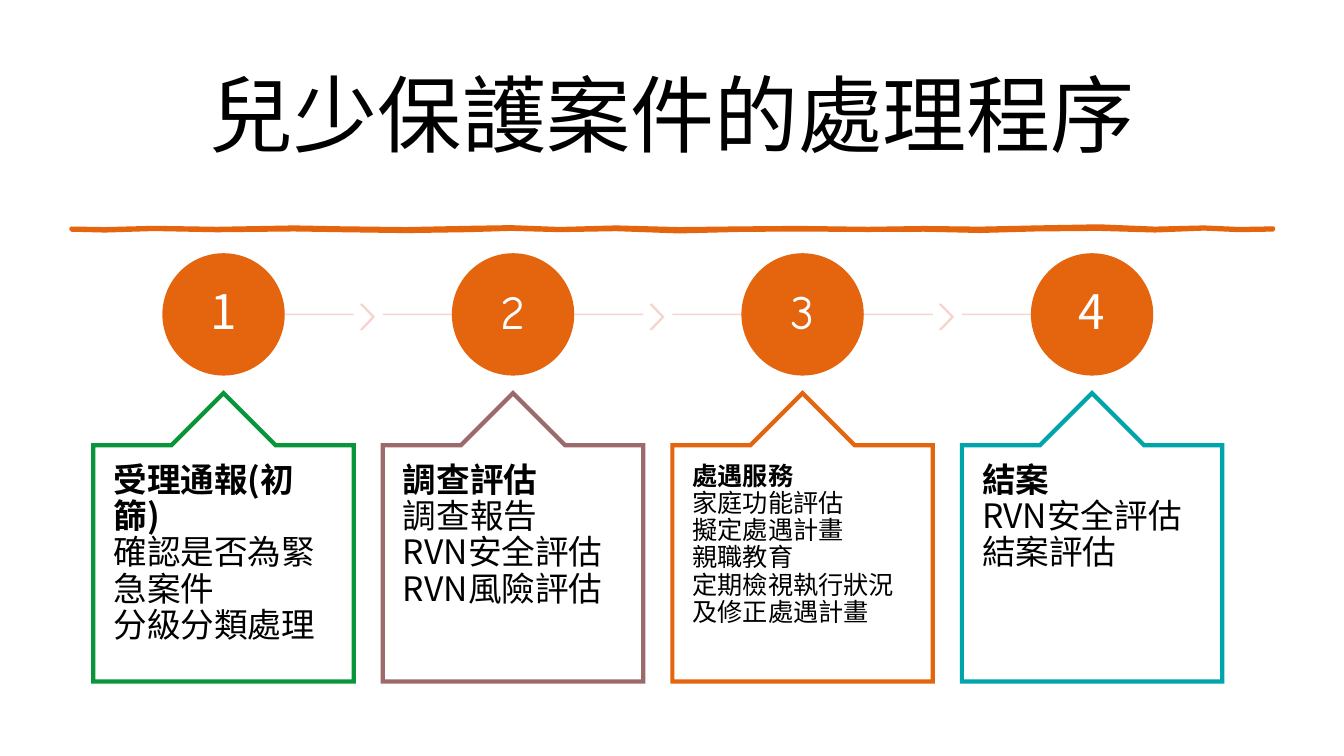
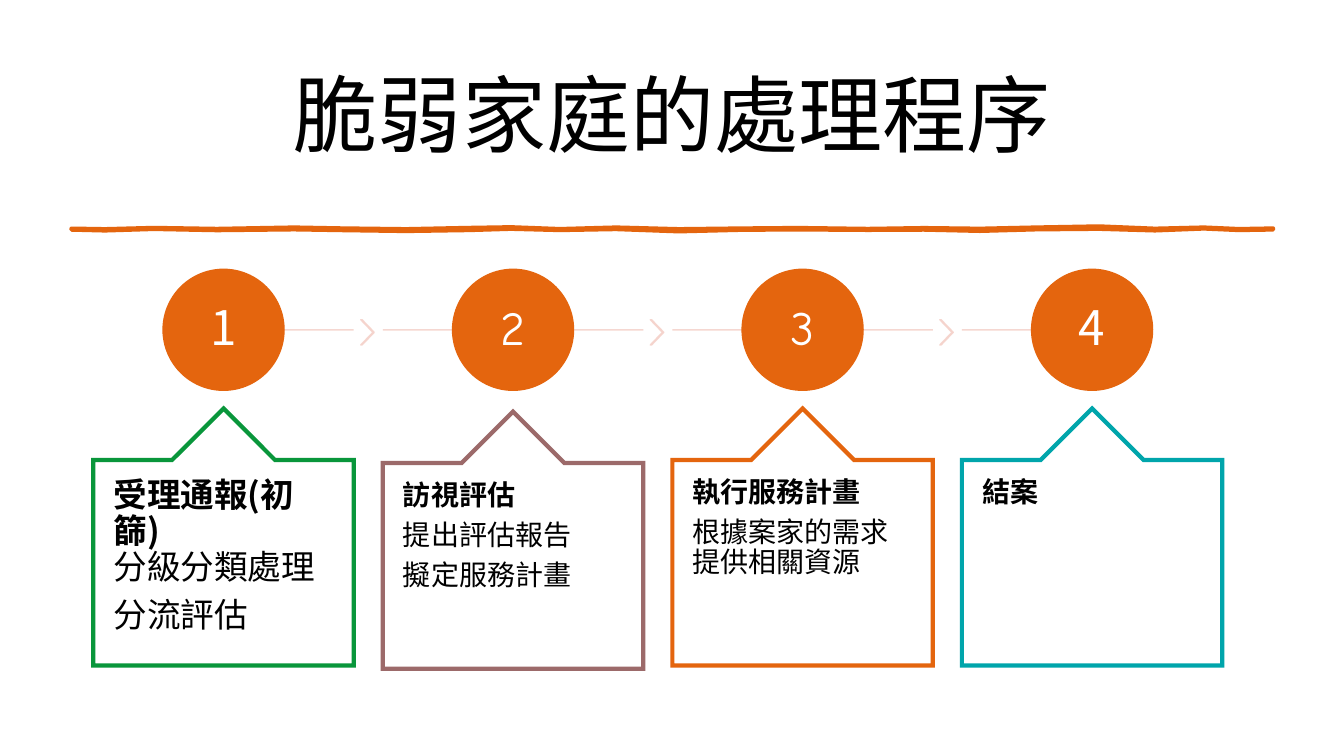
from lxml.etree import SubElement
from pptx import Presentation
from pptx.dml.color import RGBColor
from pptx.enum.shapes import MSO_CONNECTOR, MSO_SHAPE
from pptx.enum.text import MSO_ANCHOR, MSO_AUTO_SIZE, PP_ALIGN
from pptx.oxml.ns import qn
from pptx.util import Pt

COLORS = {
    "orange": "E4650E", "pink": "F5D3CC", "green": "09963B", "mauve": "9C6A6A",
    "teal": "00A5AB", "white": "FFFFFF", "black": "000000",
}
CJK, COMIC = "Noto Sans CJK TC", "Comic Neue"

# Column grid and vertical offsets from the top of the circles, in points
LEFT, PITCH, WIDTH = 66.7, 206.8, 186
CIRCLE = 86.4
CALLOUT_DROP = 99.4
STEPS = [("1", CJK, "green"), ("2", COMIC, "mauve"),
         ("3", COMIC, "orange"), ("4", CJK, "teal")]

# Hand-drawn rule: x, middle and thickness of each knot
BRUSH = [(51, 163.7, 1), (75, 164.2, 1.2), (110, 163.2, 1), (155, 164, 1.2),
         (210, 163.2, 1.6), (245, 163.8, 1.5), (290, 164.4, 1.6), (335, 163.6, 1.8),
         (365, 162.9, 1.4), (400, 164, 1), (440, 163.1, 1.4), (485, 164.5, 1.8),
         (530, 163.7, 1.2), (570, 163.4, 1.3), (620, 163.9, 1), (660, 163.5, 1.4),
         (700, 164.2, 1.8), (740, 163.2, 1.6), (785, 162.6, 2), (825, 164, 1.5),
         (860, 162.9, 1), (885, 164, 1), (909.5, 163.6, 1)]


class Deck:
    """Holds the shared style and the page being drawn."""

    def __init__(self):
        self.deck = Presentation()
        self.deck.slide_width, self.deck.slide_height = Pt(960), Pt(540)
        self.layout = self.deck.slide_layouts[5]
        self.page = None

    def add_page(self, title):
        first = self.page is None
        self.page = self.deck.slides.add_slide(self.layout)
        if first:
            self.brush_rule()
        box = self.page.shapes.title
        box.left, box.top, box.width, box.height = Pt(66), Pt(28.8), Pt(828), Pt(104.4)
        frame = box.text_frame
        frame.text = title
        frame.auto_size = MSO_AUTO_SIZE.NONE
        frame.vertical_anchor = MSO_ANCHOR.MIDDLE
        frame.paragraphs[0].alignment = PP_ALIGN.CENTER
        self.style(frame.paragraphs[0].runs[0], 60)

    def brush_rule(self):
        """Draw the rule once and move it to the layout that all pages share."""
        top = [(Pt(x), Pt(y - thick / 2)) for x, y, thick in BRUSH]
        bottom = [(Pt(x), Pt(y + thick / 2)) for x, y, thick in reversed(BRUSH)]
        builder = self.page.shapes.build_freeform(*top[0])
        builder.add_line_segments(top[1:] + bottom, close=True)
        rule = builder.convert_to_shape()
        self.paint(rule, "orange", "orange", 2.75)
        self.layout.shapes.element.append(rule.element)

    def style(self, span, size, color="black", name=CJK, bold=False):
        font = span.font
        font.size, font.bold, font.name = Pt(size), bold, name
        font.color.rgb = RGBColor.from_string(COLORS[color])
        SubElement(font._element, qn("a:ea")).set("typeface", name)

    def paint(self, shape, fill, line, weight):
        shape.shadow.inherit = False
        shape.fill.solid()
        shape.fill.fore_color.rgb = RGBColor.from_string(COLORS[fill])
        self.outline(shape, line, weight)

    def outline(self, shape, color, weight):
        shape.line.width = Pt(weight)
        shape.line.color.rgb = RGBColor.from_string(COLORS[color])

    def fade(self, shape):
        """Make the fill and line of a shape 90 % opaque."""
        for color in shape.element.spPr.iter(qn("a:srgbClr")):
            SubElement(color, qn("a:alpha")).set("val", "90000")

    def shape(self, kind, left, top, width, height, adjustments=()):
        shape = self.page.shapes.add_shape(kind, Pt(left), Pt(top), Pt(width), Pt(height))
        for index, value in enumerate(adjustments):
            shape.adjustments[index] = value
        return shape

    def margins(self, frame, across, down):
        frame.word_wrap = True
        frame.margin_left = frame.margin_right = Pt(across)
        frame.margin_top = frame.margin_bottom = Pt(down)

    def line(self, start, end, y):
        line = self.page.shapes.add_connector(
            MSO_CONNECTOR.STRAIGHT, Pt(start), Pt(y), Pt(end), Pt(y))
        self.outline(line, "pink", 1)
        self.fade(line)
        SubElement(line.element.spPr, qn("a:effectLst"))

    def chevron(self, left, top):
        chevron = self.shape(MSO_SHAPE.CHEVRON, left, top, 9.6, 18, [0.9])
        self.paint(chevron, "pink", "pink", 1)
        self.fade(chevron)

    def circle(self, left, top, number, name):
        circle = self.shape(MSO_SHAPE.OVAL, left, top, CIRCLE, CIRCLE)
        self.paint(circle, "orange", "orange", 1)
        frame = circle.text_frame
        frame.text = number
        self.margins(frame, 3.6, 3.6)
        frame.vertical_anchor = MSO_ANCHOR.MIDDLE
        para = frame.paragraphs[0]
        para.alignment, para.line_spacing = PP_ALIGN.CENTER, 0.9
        self.style(para.runs[0], 34, "white", name)

    def callout(self, left, top, height, color, size, text):
        """Box with an upward point; the first line of its text is bold."""
        box = self.shape(MSO_SHAPE.UP_ARROW_CALLOUT, left, top, WIDTH, height,
                         [0.5, 0.2, 0.2, 1])
        self.paint(box, "white", color, 3)
        SubElement(box.element.spPr.find(qn("a:ln")), qn("a:miter")).set("lim", "800000")
        frame = box.text_frame
        frame.text = text
        self.margins(frame, 14.4, 13)
        frame.vertical_anchor = MSO_ANCHOR.TOP
        for row, para in enumerate(frame.paragraphs):
            para.alignment, para.line_spacing = PP_ALIGN.LEFT, 0.9
            para.space_after = Pt(0.35 * size)
            for column, span in enumerate(para.runs):
                self.style(span, size, bold=row == column == 0)

    def process(self, top, height, contents):
        """Four numbered steps, each with a callout below it."""
        last = len(STEPS) - 1
        for index, ((number, name, color), content) in enumerate(zip(STEPS, contents)):
            size, text, shift = content
            left = LEFT + index * PITCH
            middle, right = left + WIDTH / 2, left + WIDTH
            self.line(left if index else middle, right if index < last else middle,
                      top + CIRCLE / 2)
            if index < last:
                self.chevron(right + 5, top + 36)
            self.circle(middle - CIRCLE / 2, top, number, name)
            self.callout(left, top + CALLOUT_DROP + shift, height, color, size, text)


def main():
    deck = Deck()

    # Each step: text size, text (\v breaks a line, \n a paragraph), downward shift
    deck.add_page("兒少保護案件的處理程序")
    deck.process(181.4, 206, [
        (24, "受理通報(初篩)\v確認是否為緊急案件\v分級分類處理", 0),
        (24, "調查評估\v調查報告\vRVN安全評估\vRVN風險評估", 0),
        (18, "處遇服務\v家庭功能評估\v擬定處遇計畫\v親職教育\v定期檢視執行狀況及修正處遇計畫", 0),
        (24, "結案\vRVN安全評估\v結案評估", 0),
    ])

    deck.add_page("脆弱家庭的處理程序")
    deck.process(192.4, 183.6, [
        (24, "受理通報(初篩)\v分級分類處理\n分流評估", 0),
        (20, "訪視評估\n提出評估報告\n擬定服務計畫", 2.2),
        (20, "執行服務計畫\n根據案家的需求提供相關資源", 0),
        (20, "結案", 0),
    ])

    deck.deck.save("out.pptx")


if __name__ == "__main__":
    main()
